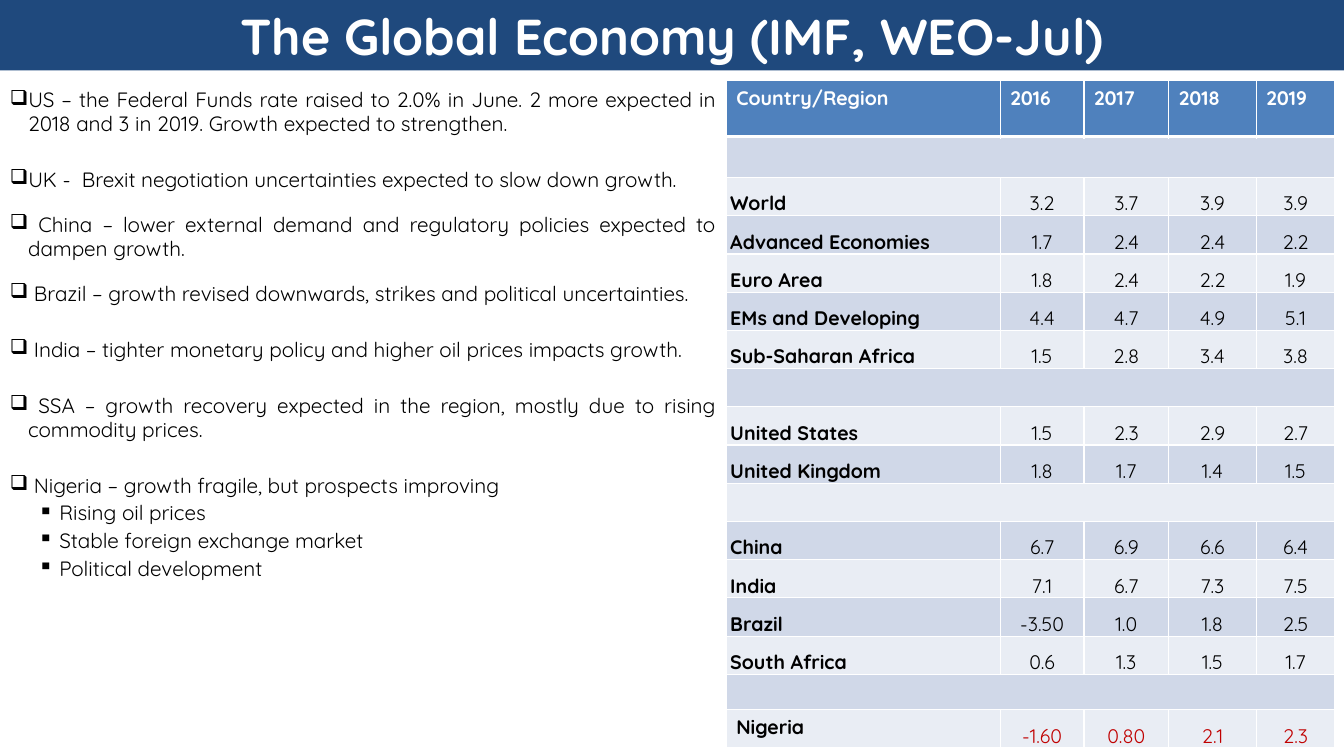
from pptx import Presentation
from pptx.util import Pt
from pptx.dml.color import RGBColor
from pptx.enum.shapes import MSO_SHAPE
from pptx.enum.text import MSO_ANCHOR, PP_ALIGN
from lxml.etree import SubElement
from pptx.oxml.ns import qn


def rgb(value):
    return RGBColor.from_string(value)


def add_run(p, text, size, color="000000", bold=False):
    r = p.add_run()
    r.text = text
    r.font.name = "Quicksand"
    r.font.size = Pt(size)
    r.font.bold = bold
    r.font.color.rgb = rgb(color)


prs = Presentation()
prs.slide_width, prs.slide_height = Pt(960), Pt(540)
s = prs.slides.add_slide(prs.slide_layouts[6])

# Title band
sp = s.shapes.add_shape(MSO_SHAPE.RECTANGLE, 0, 0, Pt(960), Pt(50.4))
sp.shadow.inherit = False
sp.fill.solid()
sp.fill.fore_color.rgb = rgb("1F497D")
sp.line.fill.background()
tf = sp.text_frame
tf.vertical_anchor = MSO_ANCHOR.MIDDLE
p = tf.paragraphs[0]
p.alignment = PP_ALIGN.CENTER
add_run(p, "The Global Economy (IMF, WEO-Jul)", 36, "FFFFFF", True)

# Country outlook: level, space before, text
outlook = [
    (0, 0, "US – the Federal Funds rate raised to 2.0% in June. 2 more expected in "
           "2018 and 3 in 2019. Growth expected to strengthen."),
    (0, 23, "UK -  Brexit negotiation uncertainties expected to slow down growth."),
    (0, 15, " China – lower external demand and regulatory policies expected to "
            "dampen growth."),
    (0, 15, " Brazil – growth revised downwards, strikes and political uncertainties."),
    (0, 23, " India – tighter monetary policy and higher oil prices impacts growth."),
    (0, 23, " SSA – growth recovery expected in the region, mostly due to rising "
            "commodity prices."),
    (0, 23, " Nigeria – growth fragile, but prospects improving"),
    (1, 2.7, "Rising oil prices"),
    (1, 2.7, "Stable foreign exchange market"),
    (1, 2.7, "Political development"),
]
bullets = [("❑", 13, -13), ("▪", 35.3, -15.1)]
tf = s.shapes.add_textbox(0, Pt(59.8), Pt(518.4), Pt(461.5)).text_frame
tf.word_wrap = True
for i, (level, before, text) in enumerate(outlook):
    p = tf.paragraphs[0] if i == 0 else tf.add_paragraph()
    p.level = level
    p.alignment = PP_ALIGN.JUSTIFY
    p.line_spacing = 0.965
    p.space_before = Pt(before)
    char, left, indent = bullets[level]
    pPr = p._p.get_or_add_pPr()
    pPr.set("marL", str(Pt(left)))
    pPr.set("indent", str(Pt(indent)))
    SubElement(pPr, qn("a:buChar")).set("char", char)
    add_run(p, text, 14.8)

# Growth table; None is an empty merged row
growth = [
    ("Country/Region", "2016", "2017", "2018", "2019"),
    None,
    ("World", "3.2", "3.7", "3.9", "3.9"),
    ("Advanced Economies", "1.7", "2.4", "2.4", "2.2"),
    ("Euro Area", "1.8", "2.4", "2.2", "1.9"),
    ("EMs and Developing", "4.4", "4.7", "4.9", "5.1"),
    ("Sub-Saharan Africa", "1.5", "2.8", "3.4", "3.8"),
    None,
    ("United States", "1.5", "2.3", "2.9", "2.7"),
    ("United Kingdom", "1.8", "1.7", "1.4", "1.5"),
    None,
    ("China", "6.7", "6.9", "6.6", "6.4"),
    ("India", "7.1", "6.7", "7.3", "7.5"),
    ("Brazil", "-3.50", "1.0", "1.8", "2.5"),
    ("South Africa", "0.6", "1.3", "1.5", "1.7"),
    None,
    ("Nigeria", "-1.60", "0.80", "2.1", "2.3"),
]
widths = [195.8, 59.8, 60.5, 62.6, 56.2]
heights = [40, 29.2] + [27.3] * 13 + [25.3, 27.3]
last = len(growth) - 1
table = s.shapes.add_table(len(growth), 5, Pt(518.7), Pt(57.6),
                           Pt(sum(widths)), Pt(sum(heights))).table
table.first_row = table.horz_banding = False
for col, width in zip(table.columns, widths):
    col.width = Pt(width)
for row, height in zip(table.rows, heights):
    row.height = Pt(height)

for i, values in enumerate(growth):
    for j in range(5):
        cell = table.cell(i, j)
        # White borders, heavier between header and body
        tcPr = cell._tc.get_or_add_tcPr()
        for side in ("L", "R", "T", "B"):
            heavy = (i, side) in ((0, "B"), (1, "T"))
            ln = SubElement(tcPr, qn("a:ln" + side), w=str(Pt(3 if heavy else 1)))
            SubElement(SubElement(ln, qn("a:solidFill")), qn("a:srgbClr")).set("val", "FFFFFF")
        cell.fill.solid()
        cell.fill.fore_color.rgb = rgb("4F81BD" if i == 0 else "D0D8E8" if i % 2 else "E9EDF4")

        # Header and the Nigeria label keep the default margins
        if i > 0 and (i, j) != (last, 0):
            cell.margin_left = cell.margin_right = Pt(2.9)
            cell.margin_top = cell.margin_bottom = 0
            cell.vertical_anchor = MSO_ANCHOR.BOTTOM
        if values:
            p = cell.text_frame.paragraphs[0]
            if i > 0 and j > 0:
                p.alignment = PP_ALIGN.CENTER
            color = "FFFFFF" if i == 0 else "C00000" if i == last and j > 0 else "000000"
            add_run(p, values[j], 14, color, i == 0 or j == 0)
    if not values:
        table.cell(i, 0).merge(table.cell(i, 4))

prs.save("out.pptx")
